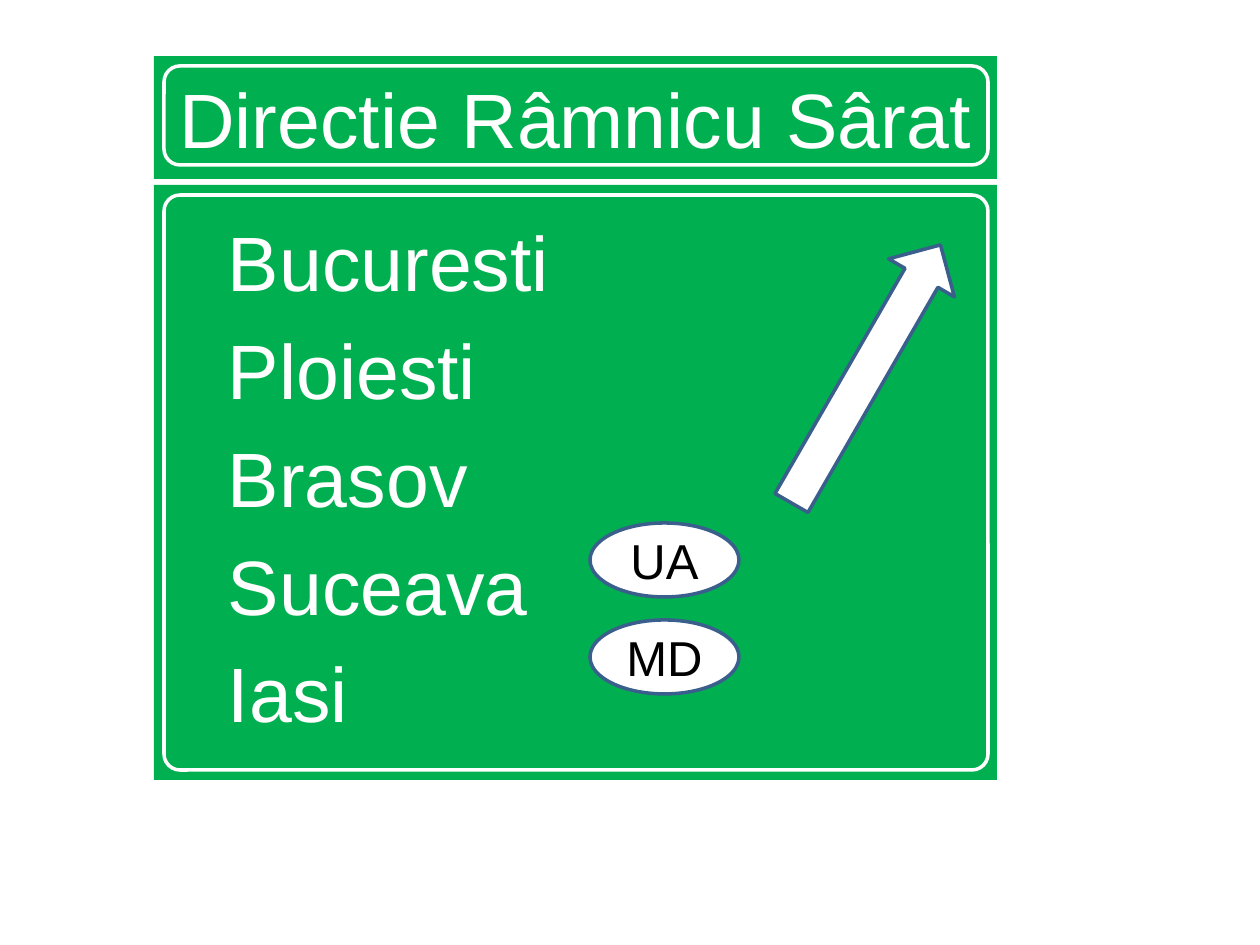
from dataclasses import dataclass

from pptx import Presentation
from pptx import util as u
from pptx.dml.color import RGBColor
from pptx.enum import shapes, text
from pptx.oxml import parse_xml
from pptx.oxml.ns import nsdecls

Kind = shapes.MSO_SHAPE
Align = text.PP_ALIGN
PX_PER_INCH = 126


def px(length):
    return u.Emu(round(length * u.Inches(1) / PX_PER_INCH))


@dataclass(frozen=True)
class Theme:
    green: RGBColor = RGBColor(0x00, 0xB0, 0x50)
    white: RGBColor = RGBColor(0xFF, 0xFF, 0xFF)
    black: RGBColor = RGBColor(0x00, 0x00, 0x00)
    outline: RGBColor = RGBColor(0x3A, 0x5F, 0x8C)
    font: str = "Arial"
    sign_size: int = 44
    code_size: int = 28
    line_width: int = 2


class RoadSign:
    """Draws the parts of a road sign on one slide, with lengths in px."""

    def __init__(self, slide, theme):
        self.slide = slide
        self.theme = theme

    def style(self, paragraph, size, color, align):
        paragraph.alignment = align
        paragraph.font.name = self.theme.font
        paragraph.font.size = u.Pt(size)
        paragraph.font.color.rgb = color

    def panel(self, placeholder, box, lines, align):
        """Turns a placeholder into a green panel with one paragraph per line."""
        placeholder.left, placeholder.top, placeholder.width, placeholder.height = map(px, box)
        placeholder.fill.solid()
        placeholder.fill.fore_color.rgb = self.theme.green
        frame = placeholder.text_frame
        frame.auto_size = text.MSO_AUTO_SIZE.NONE
        frame.text = "\n".join(lines)
        for paragraph in frame.paragraphs:
            self.style(paragraph, self.theme.sign_size, self.theme.white, align)
        return frame

    def heading(self, box, wording):
        frame = self.panel(self.slide.shapes.title, box, [wording], Align.CENTER)
        frame.vertical_anchor = text.MSO_ANCHOR.MIDDLE

    def destinations(self, box, towns):
        frame = self.panel(self.slide.placeholders[1], box, towns, Align.LEFT)
        frame.margin_left, frame.margin_top = px(74), px(30)
        for paragraph in frame.paragraphs:
            properties = paragraph._p.get_or_add_pPr()
            properties.set("marL", "0")
            properties.set("indent", "0")
            properties.append(parse_xml(f"<a:buNone {nsdecls('a')}/>"))

    def outlined(self, kind, box, line, fill=None):
        shape = self.slide.shapes.add_shape(kind, *map(px, box))
        shape.shadow.inherit = False
        if fill is None:
            shape.fill.background()
        else:
            shape.fill.solid()
            shape.fill.fore_color.rgb = fill
        shape.line.color.rgb = line
        shape.line.width = u.Pt(self.theme.line_width)
        return shape

    def arrow(self, box, rotation):
        shape = self.outlined(Kind.UP_ARROW, box, self.theme.outline, self.theme.white)
        shape.rotation = rotation

    def country(self, box, code):
        oval = self.outlined(Kind.OVAL, box, self.theme.outline, self.theme.white)
        frame = oval.text_frame
        frame.text = code
        frame.vertical_anchor = text.MSO_ANCHOR.MIDDLE
        self.style(frame.paragraphs[0], self.theme.code_size, self.theme.black, Align.CENTER)

    def border(self, box, radius):
        frame = self.outlined(Kind.ROUNDED_RECTANGLE, box, self.theme.white)
        frame.adjustments[0] = radius / min(box[2:])


def main():
    prs = Presentation()
    prs.slide_width, prs.slide_height = u.Inches(10), u.Inches(7.5)
    sign = RoadSign(prs.slides.add_slide(prs.slide_layouts[1]), Theme())

    sign.heading((154, 56, 843, 123), "Directie Râmnicu Sârat")
    sign.destinations(
        (154, 185, 843, 595),
        ["Bucuresti", "Ploiesti", "Brasov", "Suceava", "Iasi"],
    )
    sign.arrow((828, 225, 76, 298), rotation=30)
    for row, code in enumerate(["UA", "MD"]):
        sign.country((590, 523 + 97 * row, 149, 74), code)
    for top, height in [(66, 99), (195, 575)]:
        sign.border((164, top, 824, height), radius=16)

    prs.save("out.pptx")


if __name__ == "__main__":
    main()
